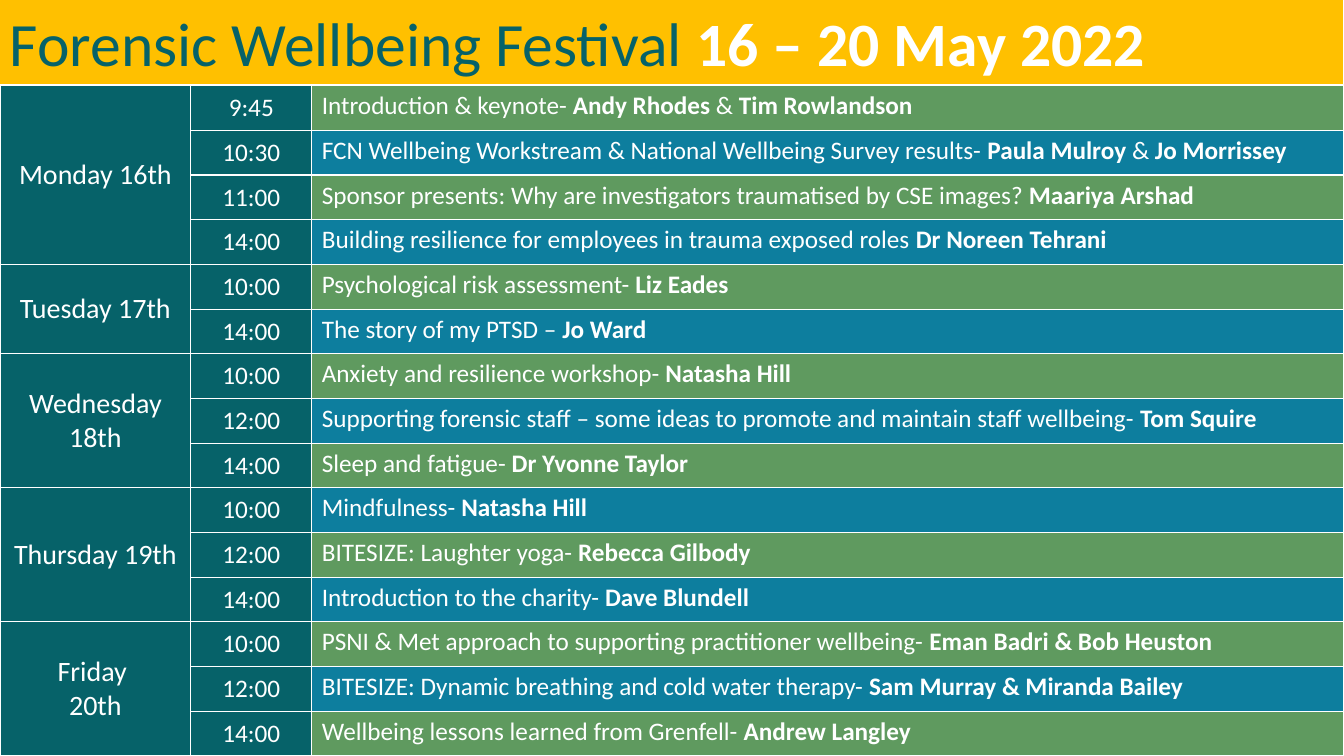
from dataclasses import dataclass

from lxml import etree
from pptx import Presentation
from pptx.dml.color import RGBColor
from pptx.enum.shapes import MSO_SHAPE
from pptx.enum.text import MSO_ANCHOR, PP_ALIGN
from pptx.oxml.ns import qn
from pptx.util import Inches, Pt

RECT = MSO_SHAPE.RECTANGLE
TOP, MIDDLE = MSO_ANCHOR.TOP, MSO_ANCHOR.MIDDLE
LEFT, CENTER = PP_ALIGN.LEFT, PP_ALIGN.CENTER


@dataclass(frozen=True)
class Theme:
    font: str = "Calibri"
    teal: str = "066269"
    green: str = "5F9A5F"
    blue: str = "0D7E9E"
    gold: str = "FFC000"
    white: str = "FFFFFF"
    title_size: int = 44
    day_size: int = 20
    text_size: int = 18
    border: float = 1
    title_line: float = 0.75


THEME = Theme()
SLIDE_W, SLIDE_H = Inches(13.33), Inches(7.5)
TITLE_H = Inches(0.84)
TABLE_TOP = Inches(0.85)
COLUMN_SHARES = (0.142, 0.09, 0.768)

# Speakers between asterisks are bold
TITLE = "Forensic Wellbeing Festival *16 – 20 May 2022*"
PROGRAMME = [
    ("Monday 16th", [
        ("9:45", "Introduction & keynote- *Andy Rhodes *& *Tim Rowlandson*"),
        ("10:30", "FCN Wellbeing Workstream & National Wellbeing Survey results- "
                  "*Paula Mulroy *& *Jo Morrissey*"),
        ("11:00", "Sponsor presents: Why are investigators traumatised by CSE images? "
                  "*Maariya Arshad*"),
        ("14:00", "Building resilience for employees in trauma exposed roles "
                  "*Dr Noreen Tehrani*"),
    ]),
    ("Tuesday 17th", [
        ("10:00", "Psychological risk assessment- *Liz Eades*"),
        ("14:00", "The story of my PTSD – *Jo Ward*"),
    ]),
    ("Wednesday 18th", [
        ("10:00", "Anxiety and resilience workshop- *Natasha Hill*"),
        ("12:00", "Supporting forensic staff – some ideas to promote and maintain "
                  "staff wellbeing- *Tom Squire*"),
        ("14:00", "Sleep and fatigue- *Dr Yvonne Taylor*"),
    ]),
    ("Thursday 19th", [
        ("10:00", "Mindfulness- *Natasha Hill*"),
        ("12:00", "BITESIZE: Laughter yoga- *Rebecca Gilbody*"),
        ("14:00", "Introduction to the charity- *Dave Blundell*"),
    ]),
    ("Friday \n20th", [
        ("10:00", "PSNI & Met approach to supporting practitioner wellbeing- "
                  "*Eman Badri & Bob Heuston*"),
        ("12:00", "BITESIZE: Dynamic breathing and cold water therapy- "
                  "*Sam Murray & Miranda Bailey*"),
        ("14:00", "Wellbeing lessons learned from Grenfell- *Andrew Langley*"),
    ]),
]


def rgb(color):
    return RGBColor.from_string(color)


def write(tf, text, size, color, bold_color, align):
    """Write one paragraph per line; parts between asterisks are bold."""
    for i, line in enumerate(text.split("\n")):
        p = tf.add_paragraph() if i else tf.paragraphs[0]
        p.alignment = align
        p.font.name, p.font.size = THEME.font, Pt(size)
        for j, part in enumerate(line.split("*")):
            if part:
                r = p.add_run()
                r.text = part
                r.font.bold = j % 2 == 1
                r.font.color.rgb = rgb(bold_color if j % 2 else color)


def fill_cell(cell, color):
    cell.fill.solid()
    cell.fill.fore_color.rgb = rgb(color)
    props = cell._tc.get_or_add_tcPr()
    for i, side in enumerate(("lnL", "lnR", "lnT", "lnB")):
        ln = etree.Element(qn(f"a:{side}"), w=str(Pt(THEME.border)))
        solid = etree.SubElement(ln, qn("a:solidFill"))
        etree.SubElement(solid, qn("a:srgbClr"), val=THEME.white)
        props.insert(i, ln)


def write_cell(cell, text, size, align=CENTER, anchor=MIDDLE):
    cell.vertical_anchor = anchor
    write(cell.text_frame, text, size, THEME.white, THEME.white, align)


def add_title(slide, x, y, w, h):
    sp = slide.shapes.add_shape(RECT, x, y, w, h)
    sp.shadow.inherit = False
    sp.fill.solid()
    sp.fill.fore_color.rgb = rgb(THEME.gold)
    sp.line.color.rgb = rgb(THEME.white)
    sp.line.width = Pt(THEME.title_line)
    tf = sp.text_frame
    tf.word_wrap = True
    tf.vertical_anchor = TOP
    write(tf, TITLE, THEME.title_size, THEME.teal, THEME.white, LEFT)


def add_programme(slide, x, y, w, h):
    row_count = sum(len(sessions) for _, sessions in PROGRAMME)
    table = slide.shapes.add_table(row_count, len(COLUMN_SHARES), x, y, w, h).table
    table.first_row = table.horz_banding = False
    for column, share in zip(table.columns, COLUMN_SHARES):
        column.width = int(w * share)
    for row in table.rows:
        row.height = int(h / row_count)

    # Row colours alternate down the whole week
    for i in range(row_count):
        session_color = THEME.blue if i % 2 else THEME.green
        for j, color in enumerate((THEME.teal, THEME.teal, session_color)):
            fill_cell(table.cell(i, j), color)

    # Each day spans its sessions
    first = 0
    for day, sessions in PROGRAMME:
        day_cell = table.cell(first, 0)
        day_cell.merge(table.cell(first + len(sessions) - 1, 0))
        write_cell(day_cell, day, THEME.day_size)
        for i, (time, session) in enumerate(sessions, first):
            write_cell(table.cell(i, 1), time, THEME.text_size)
            write_cell(table.cell(i, 2), session, THEME.text_size, LEFT, TOP)
        first += len(sessions)


def main():
    prs = Presentation()
    prs.slide_width, prs.slide_height = SLIDE_W, SLIDE_H
    slide = prs.slides.add_slide(prs.slide_layouts[6])
    add_programme(slide, 0, TABLE_TOP, SLIDE_W, SLIDE_H - TABLE_TOP)
    add_title(slide, 0, 0, SLIDE_W, TITLE_H)
    prs.save("out.pptx")


if __name__ == "__main__":
    main()
